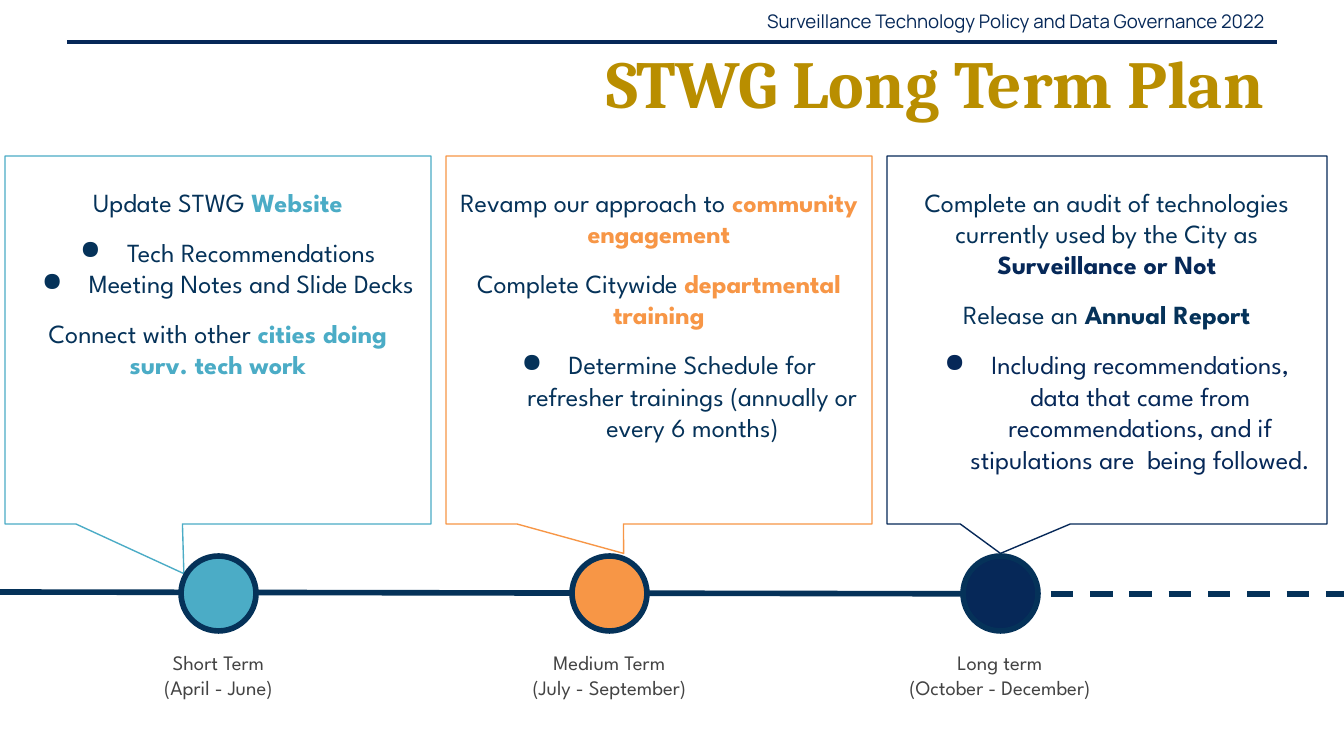
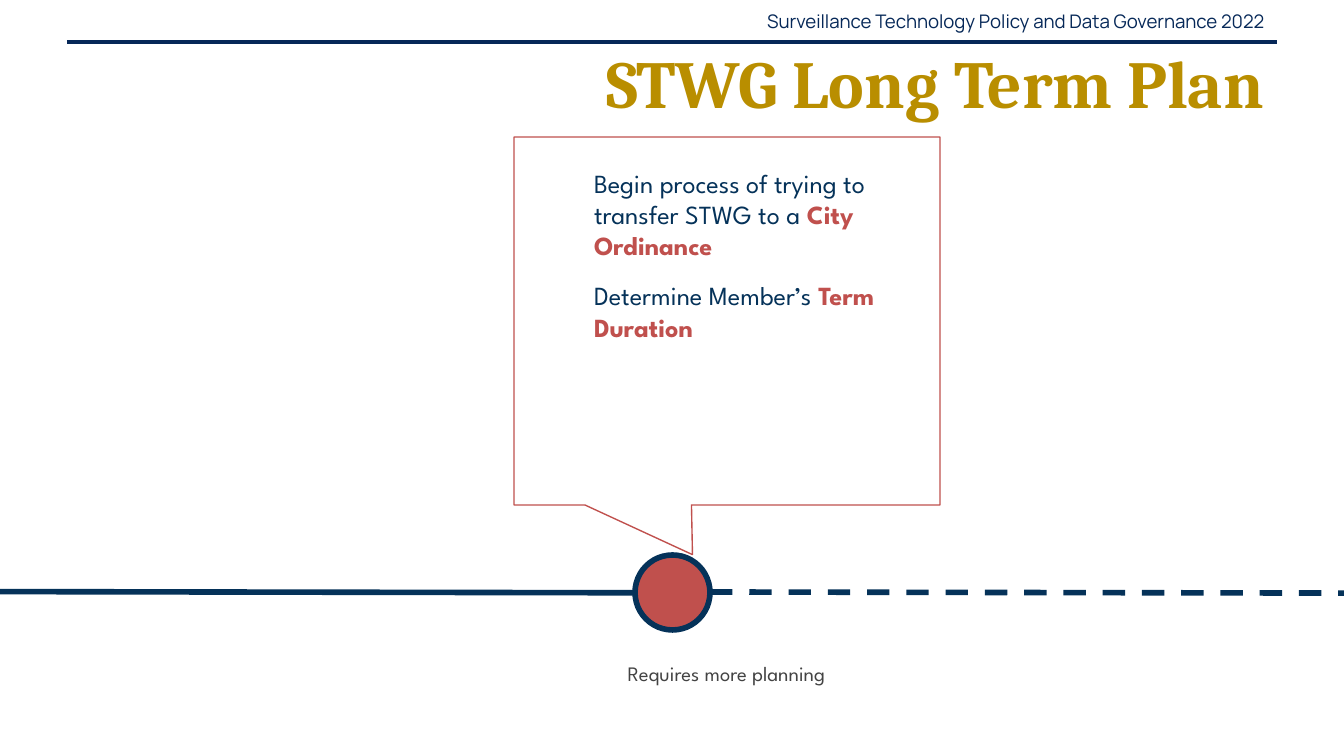
from pptx import Presentation
from pptx.dml.color import RGBColor
from pptx.enum.dml import MSO_LINE_DASH_STYLE as Dash
from pptx.enum.shapes import MSO_CONNECTOR_TYPE as Link, MSO_SHAPE as Kind
from pptx.enum.text import MSO_ANCHOR as Anchor, MSO_AUTO_SIZE as Fit, PP_ALIGN as Align
from pptx.util import Pt
from lxml.etree import SubElement
from pptx.oxml.ns import qn

NAVY, INK, GOLD, GRAY = "062858", "053259", "B98E00", "434343"
TEAL, AMBER, RED = "4BACC6", "F79646", "C0504D"
BODY, HEAD, TOP = "League Spartan", "Cambria", "Manrope"
HEADER = "Surveillance Technology Policy and Data Governance 2022"
TITLE = "STWG Long Term Plan"
WIDE, HIGH, BOX_H, DOT = 1344, 756, 368, 75

# Paragraph: style, then runs of (text, colour, bold)
SHORT = [
    ("mid", ("Update STWG ", INK, False), ("Website", TEAL, True)),
    ("dot", ("Tech Recommendations", INK, False)),
    ("next", ("Meeting Notes and Slide Decks", INK, False)),
    ("mid", ("Connect with other ", INK, False), ("cities doing surv. tech work", TEAL, True)),
]
MEDIUM = [
    ("mid", ("Revamp our approach to ", INK, False), ("community engagement", AMBER, True)),
    ("mid", ("Complete Citywide ", INK, False), ("departmental training", AMBER, True)),
    ("dot", ("Determine Schedule for refresher trainings (annually or every 6 months)", INK, False)),
]
LONG = [
    ("mid", ("Complete an audit of technologies currently used by the City as", INK, False),
     (" Surveillance or Not", NAVY, True)),
    ("mid", ("Release an ", INK, False), ("Annual Report", INK, True)),
    ("dot", ("Including recommendations, data that came from recommendations, "
             "and if stipulations are  being followed.", NAVY, False)),
]
LATER = [
    ("left", ("Begin process of trying to transfer STWG to a ", INK, False), ("City Ordinance", RED, True)),
    ("left", ("Determine Member’s ", INK, False), ("Term Duration", RED, True)),
]

SLIDES = [
    {
        "box_y": 156, "dot_y": 556, "label_y": 637, "label_h": 77,
        "lines": [((1051, 594), (1345, 594), True), ((-1, 592), (1038, 594), False)],
        "steps": [
            {"color": TEAL, "box": (5, 426), "tail": (-0.08, 0.635), "dot": 181, "text": SHORT,
             "text_h": 305, "label": (132, 173), "name": ["Short Term", "(April - June)"]},
            {"color": AMBER, "box": (446, 426), "tail": (-0.083, 0.58), "dot": 572, "text": MEDIUM,
             "text_h": 286, "label": (510, 199), "name": ["Medium Term", "(July - September)"]},
            {"color": NAVY, "box": (887, 440), "tail": (-0.242, 0.58), "dot": 963, "text": LONG,
             "text_h": 349, "label": (885, 230), "name": ["Long term", "(October - December)"]},
        ],
    },
    {
        "box_y": 137, "dot_y": 555, "label_y": 649, "label_h": 52,
        "lines": [((710, 592), (1825, 594), True), ((-329, 591), (710, 593), False)],
        "steps": [
            {"color": RED, "box": (514, 426), "tail": (-0.081, 0.635), "dot": 635, "text": LATER,
             "text_h": 255, "label": (554, 345), "name": ["Requires more planning"]},
        ],
    },
]


def px(n):
    return round(n * 9144000 / WIDE)


def rgb(code):
    return RGBColor.from_string(code)


def rule(slide, start, end, color, width, dashed=False):
    link = slide.shapes.add_connector(Link.STRAIGHT, *map(px, start + end))
    link.line.color.rgb = rgb(color)
    link.line.width = Pt(width)
    if dashed:
        link.line.dash_style = Dash.DASH
    SubElement(link.element.spPr, qn("a:effectLst"))


def form(slide, kind, place, fill, color, width):
    shape = slide.shapes.add_shape(kind, *map(px, place))
    shape.shadow.inherit = False
    if fill:
        shape.fill.solid()
        shape.fill.fore_color.rgb = rgb(fill)
    else:
        shape.fill.background()
    shape.line.color.rgb = rgb(color)
    shape.line.width = Pt(width)
    return shape


def bullet(para, color):
    props = para._p.get_or_add_pPr()
    SubElement(SubElement(props, qn("a:buClr")), qn("a:srgbClr"), val=color)
    SubElement(props, qn("a:buChar"), char="●")


def indent(para, left, first):
    props = para._p.get_or_add_pPr()
    props.set("marL", str(px(left)))
    props.set("indent", str(px(first)))


def write(slide, place, paras, font, size, grow=True):
    box = slide.shapes.add_textbox(*map(px, place))
    frame = box.text_frame
    frame.word_wrap = True
    frame.auto_size = Fit.SHAPE_TO_FIT_TEXT if grow else Fit.NONE
    frame.vertical_anchor = Anchor.TOP if grow else Anchor.MIDDLE
    frame.margin_left = frame.margin_right = px(13)
    frame.margin_top = frame.margin_bottom = px(13 if grow else 7)
    for i, (style, *runs) in enumerate(paras):
        para = frame.add_paragraph() if i else frame.paragraphs[0]
        para.alignment = {"left": Align.LEFT, "right": Align.RIGHT}.get(style, Align.CENTER)
        if i and style in ("mid", "dot", "left"):
            para.space_before = Pt(10)
        if style in ("dot", "next"):
            indent(para, 67, -47)
            bullet(para, runs[0][1])
        elif style == "left":
            indent(para, 67, 0)
        for words, color, bold in runs:
            run = para.add_run()
            run.text = words
            run.font.name = font
            run.font.size = Pt(size)
            run.font.bold = bold
            run.font.color.rgb = rgb(color)


def build(deck, page):
    slide = deck.slides.add_slide(deck.slide_layouts[6])
    rule(slide, (67, 42), (1277, 42), NAVY, 2.25)
    write(slide, (700, 1, 577, 40), [("right", (HEADER, NAVY, False))], TOP, 10, False)
    for step in page["steps"]:
        left, width = step["box"]
        call = form(slide, Kind.RECTANGULAR_CALLOUT, (left, page["box_y"], width, BOX_H),
                    None, step["color"], 0.75)
        for i, value in enumerate(step["tail"]):
            call.adjustments[i] = value
    for start, end, dashed in page["lines"]:
        rule(slide, start, end, INK, 3, dashed)
    for step in page["steps"]:
        left, width = step["box"]
        form(slide, Kind.OVAL, (step["dot"], page["dot_y"], DOT, DOT), step["color"], INK, 3)
        write(slide, (left, page["box_y"] + 17, width, step["text_h"]), step["text"], BODY, 14)
        left, width = step["label"]
        name = [("label", (line, GRAY, False)) for line in step["name"]]
        write(slide, (left, page["label_y"], width, page["label_h"]), name, BODY, 11)
    write(slide, (415, 39, 862, 86), [("right", (TITLE, GOLD, True))], HEAD, 36, False)


def main():
    deck = Presentation()
    deck.slide_width, deck.slide_height = px(WIDE), px(HIGH)
    for page in SLIDES:
        build(deck, page)
    deck.save("out.pptx")


if __name__ == "__main__":
    main()
